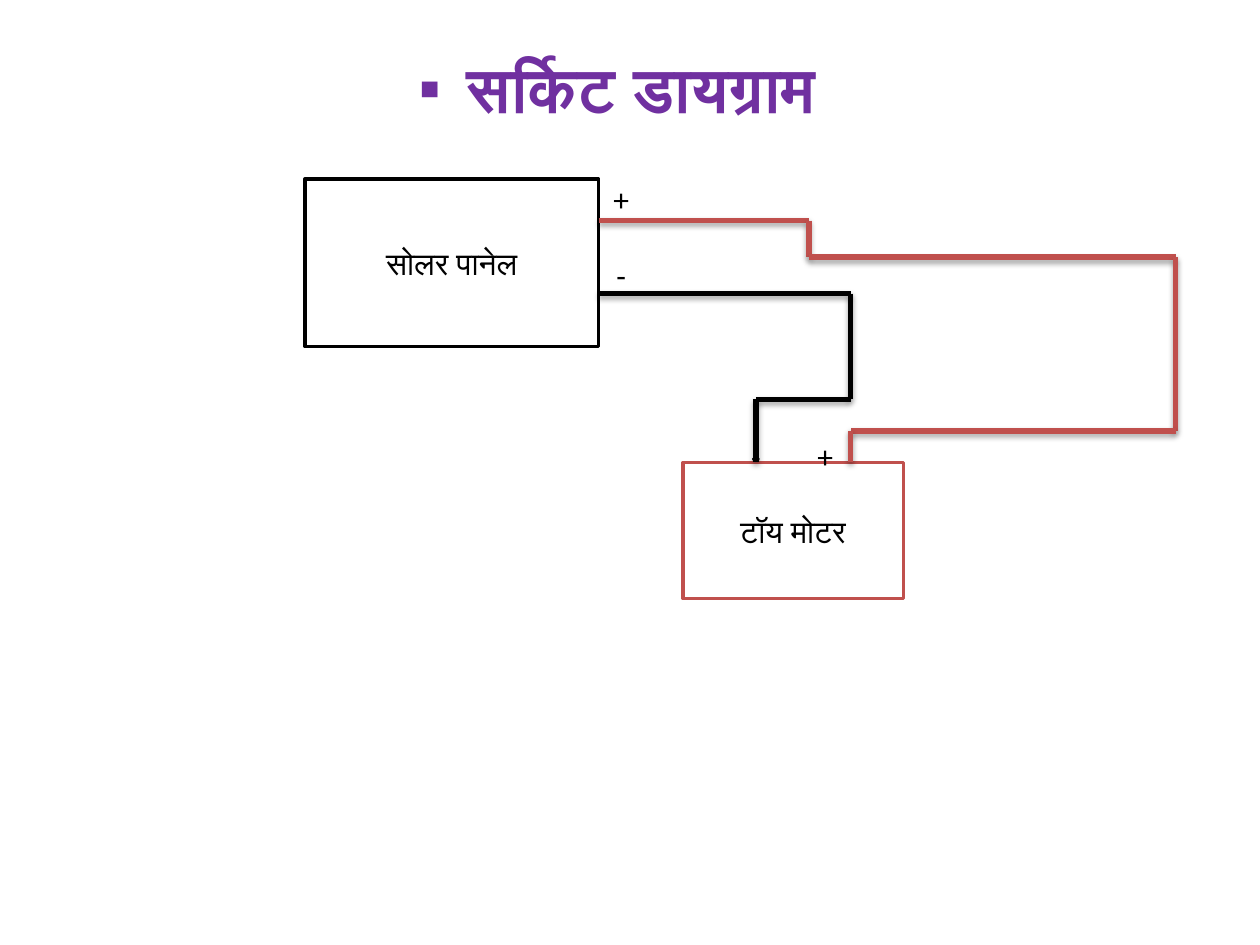
from itertools import pairwise

from lxml.etree import SubElement
from pptx import Presentation
from pptx.dml.color import RGBColor
from pptx.enum.shapes import MSO_CONNECTOR, MSO_SHAPE
from pptx.enum.text import MSO_ANCHOR, PP_ALIGN
from pptx.oxml.ns import qn
from pptx.util import Inches, Pt

BLACK = RGBColor(0x00, 0x00, 0x00)
WHITE = RGBColor(0xFF, 0xFF, 0xFF)
RED = RGBColor(0xC0, 0x50, 0x4D)
PURPLE = RGBColor(0x70, 0x30, 0xA0)

BODY_FONT = {"name": "Calibri", "size": Pt(18), "bold": False}
TITLE_FONT = {"name": "Montserrat", "size": Pt(36), "bold": True}

POSITIVE_WIRE = [(4.75, 1.75), (6.42, 1.75), (6.42, 2.04), (9.33, 2.04),
                 (9.33, 3.42), (6.75, 3.42), (6.75, 3.67)]
NEGATIVE_WIRE = [(4.75, 2.33), (6.75, 2.33), (6.75, 3.17), (6, 3.17), (6, 3.67)]
TERMINALS = [("+", 4.93, 1.38), ("-", 4.93, 1.98), ("-", 6, 3.42), ("+", 6.55, 3.42)]


def write_text(shape, text, font_format, color):
    frame = shape.text_frame
    frame.word_wrap = True
    frame.vertical_anchor = MSO_ANCHOR.MIDDLE
    paragraph = frame.paragraphs[0]
    paragraph.alignment = PP_ALIGN.CENTER
    run = paragraph.add_run()
    run.text = text
    for name, value in font_format.items():
        setattr(run.font, name, value)
    run.font.color.rgb = color
    return paragraph


def add_text(slide, box, text, font_format, color):
    shape = slide.shapes.add_textbox(*map(Inches, box))
    return shape, write_text(shape, text, font_format, color)


def add_title(slide, text):
    _, paragraph = add_text(slide, (0.08, 0.01, 9.64, 1.37), text, TITLE_FONT, PURPLE)
    properties = paragraph._p.get_or_add_pPr()
    properties.set("marL", str(Inches(0.38)))
    properties.set("indent", str(Inches(-0.38)))
    SubElement(properties, qn("a:buFont"), typeface="Arial")
    SubElement(properties, qn("a:buChar"), char="▪")


def add_component(slide, box, text, line_color):
    shape = slide.shapes.add_shape(MSO_SHAPE.RECTANGLE, *map(Inches, box))
    shape.shadow.inherit = False
    shape.fill.solid()
    shape.fill.fore_color.rgb = WHITE
    shape.line.color.rgb = line_color
    shape.line.width = Pt(2)
    write_text(shape, text, BODY_FONT, BLACK)


def add_soft_shadow(connector):
    effects = SubElement(connector._element.spPr, qn("a:effectLst"))
    shadow = SubElement(effects, qn("a:outerShdw"), blurRad=str(Pt(3.1)),
                        dist=str(Pt(1.8)), dir="5400000", rotWithShape="0")
    color = SubElement(shadow, qn("a:srgbClr"), val=str(BLACK))
    SubElement(color, qn("a:alpha"), val="35000")


def add_wire(slide, points, color):
    for start, end in pairwise(points):
        connector = slide.shapes.add_connector(
            MSO_CONNECTOR.STRAIGHT, *map(Inches, start + end))
        connector.line.color.rgb = color
        connector.line.width = Pt(3)
        add_soft_shadow(connector)


def add_terminal(slide, sign, center, top):
    width = 0.3
    shape, _ = add_text(slide, (center - width / 2, top, width, 0.4), sign, BODY_FONT, BLACK)
    shape.text_frame.margin_left = shape.text_frame.margin_right = 0


def main():
    presentation = Presentation()
    presentation.slide_width = Inches(10)
    presentation.slide_height = Inches(7.5)
    slide = presentation.slides.add_slide(presentation.slide_layouts[6])
    add_title(slide, "सर्किट डायग्राम")
    add_component(slide, (2.42, 1.42, 2.33, 1.33), "सोलर पानेल", BLACK)
    add_component(slide, (5.42, 3.67, 1.75, 1.08), "टॉय मोटर", RED)
    add_wire(slide, POSITIVE_WIRE, RED)
    add_wire(slide, NEGATIVE_WIRE, BLACK)
    for terminal in TERMINALS:
        add_terminal(slide, *terminal)
    presentation.save("out.pptx")


if __name__ == "__main__":
    main()
